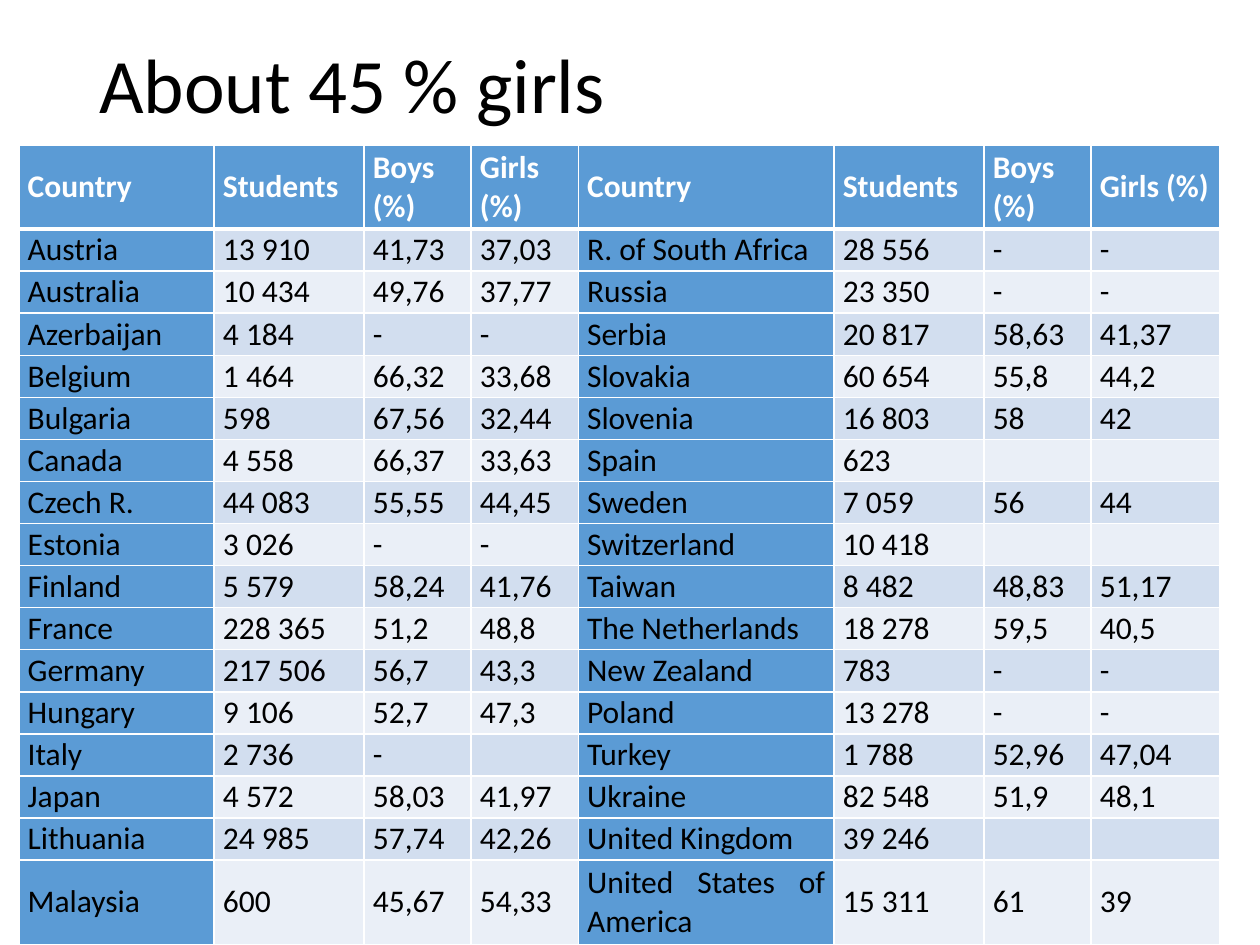
from pptx import Presentation
from pptx.dml.color import RGBColor
from pptx.enum.text import MSO_ANCHOR, PP_ALIGN
from pptx.oxml import parse_xml
from pptx.oxml.ns import nsdecls
from pptx.util import Inches, Pt

HEAD = ["Country", "Students", "Boys (%)", "Girls (%)"] * 2
DATA = """\
Austria|13 910|41,73|37,03|R. of South Africa|28 556|-|-
Australia|10 434|49,76|37,77|Russia|23 350|-|-
Azerbaijan|4 184|-|-|Serbia|20 817|58,63|41,37
Belgium|1 464|66,32|33,68|Slovakia|60 654|55,8|44,2
Bulgaria|598|67,56|32,44|Slovenia|16 803|58|42
Canada|4 558|66,37|33,63|Spain|623||
Czech R.|44 083|55,55|44,45|Sweden|7 059|56|44
Estonia|3 026|-|-|Switzerland|10 418||
Finland|5 579|58,24|41,76|Taiwan|8 482|48,83|51,17
France|228 365|51,2|48,8|The Netherlands|18 278|59,5|40,5
Germany|217 506|56,7|43,3|New Zealand|783|-|-
Hungary|9 106|52,7|47,3|Poland|13 278|-|-
Italy|2 736|-||Turkey|1 788|52,96|47,04
Japan|4 572|58,03|41,97|Ukraine|82 548|51,9|48,1
Lithuania|24 985|57,74|42,26|United Kingdom|39 246||
Malaysia|600|45,67|54,33|United States of America|15 311|61|39"""
ROWS = [HEAD] + [line.split("|") for line in DATA.splitlines()]
WIDTHS = [1.55, 1.19, 0.85, 0.85, 2.03, 1.19, 0.85, 1.02]
LEFT = {"R. of South Africa", "United Kingdom"}


def color(code):
    return RGBColor.from_string(code)


def write(frame, text, size=18, ink="000000", bold=False, align=None, space=None):
    para = frame.paragraphs[0]
    para.alignment = align
    para.line_spacing = space
    if text:
        run = para.add_run()
        run.text = text
        font = run.font
        font.name, font.size, font.bold = "Calibri", Pt(size), bold
        font.color.rgb = color(ink)


class Deck:
    blue, dark, light, white = "5B9BD5", "D2DEEF", "EAEFF7", "FFFFFF"

    def __init__(self):
        self.file = Presentation()
        self.file.slide_width, self.file.slide_height = Inches(10), Inches(7.5)
        self.slide = self.file.slides.add_slide(self.file.slide_layouts[6])

    def title(self, text, x, y, w, h):
        box = self.slide.shapes.add_textbox(Inches(x), Inches(y), Inches(w), Inches(h))
        frame = box.text_frame
        frame.word_wrap = True
        frame.vertical_anchor = MSO_ANCHOR.MIDDLE
        write(frame, text, size=44, space=0.9)

    def edges(self, cell, top, bottom):
        props = cell._tc.get_or_add_tcPr()
        for side, width in zip("LRTB", (1, 1, top, bottom)):
            props.append(parse_xml(
                f'<a:ln{side} {nsdecls("a")} w="{Pt(width)}"><a:solidFill>'
                f'<a:srgbClr val="{self.white}"/></a:solidFill></a:ln{side}>'))

    def cell(self, cell, text, row, col):
        # Thick rule between the header and the body
        self.edges(cell, 3 if row == 1 else 1, 3 if row == 0 else 1)
        band = self.dark if row % 2 else self.light
        cell.fill.solid()
        cell.fill.fore_color.rgb = color(self.blue if row == 0 or col % 4 == 0 else band)
        cell.margin_left = cell.margin_right = Inches(0.07)
        cell.margin_top = cell.margin_bottom = 0
        cell.vertical_anchor = MSO_ANCHOR.MIDDLE
        write(cell.text_frame, text, ink="000000" if row else self.white, bold=row == 0,
              align=PP_ALIGN.LEFT if text in LEFT else PP_ALIGN.JUSTIFY)

    def table(self, rows, widths, x, y, h):
        grid = self.slide.shapes.add_table(
            len(rows), len(widths), Inches(x), Inches(y),
            Inches(sum(widths)), Inches(h)).table
        for col, width in zip(grid.columns, widths):
            col.width = Inches(width)
        # The first and last rows hold two lines each
        unit = h / (len(rows) + 2)
        for r, row in enumerate(rows):
            lines = 2 if r in (0, len(rows) - 1) else 1
            grid.rows[r].height = Inches(unit * lines)
            for c, text in enumerate(row):
                self.cell(grid.cell(r, c), text, r, c)


def main():
    deck = Deck()
    # Title
    deck.title("About 45 % girls", 0.69, 0.25, 8.62, 0.9)
    # Students by country
    deck.table(ROWS, WIDTHS, 0.15, 1.15, 6.35)
    deck.file.save("out.pptx")


if __name__ == "__main__":
    main()
